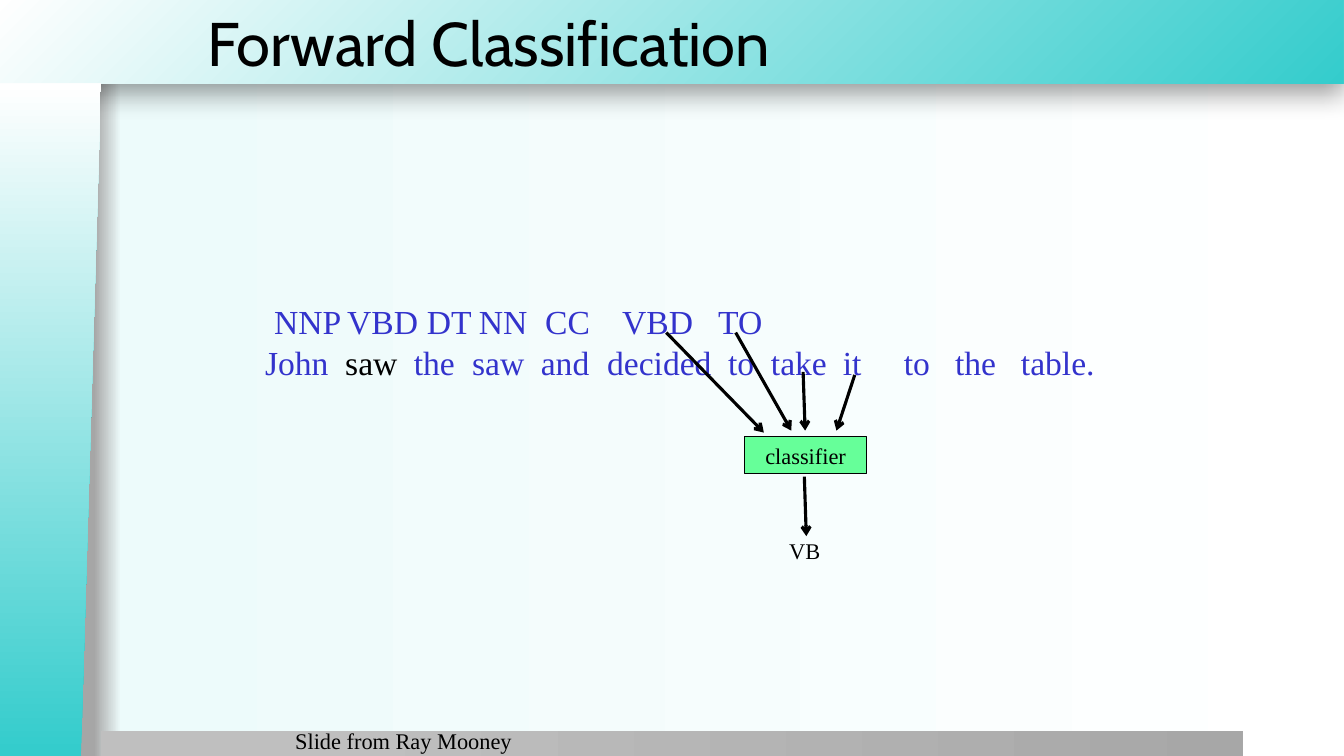
from lxml import etree
from pptx import Presentation
from pptx import util as u
from pptx.dml.color import RGBColor
from pptx.enum import shapes, text
from pptx.oxml import parse_xml
from pptx.oxml.ns import nsdecls, qn

COLORS = {
    "black": "000000",
    "white": "FFFFFF",
    "teal": "34CCCC",
    "mist": "EDFBFB",
    "shade": "A6A6A6",
    "footer_start": "BFBFBF",
    "footer_end": "A7A7A7",
    "tagged": "3333CC",
    "classifier": "66FF99",
}
SERIF = "Times New Roman"


class SlideBuilder:
    """Holds the style and the current slide."""

    def __init__(self, slide, font=SERIF, size=16, line_width=2.25):
        self.slide = slide
        self.font, self.size, self.line_width = font, size, line_width

    def color(self, name):
        return RGBColor.from_string(COLORS[name])

    def gradient(self, fill, owner, stops, circle=False):
        """Fill with (percent, color) stops, linear or from the lower right."""
        fill.gradient()
        gradient = owner.find(".//" + qn("a:gradFill"))
        for child in list(gradient):
            gradient.remove(child)
        stop_list = etree.SubElement(gradient, qn("a:gsLst"))
        for percent, name in stops:
            stop = etree.SubElement(stop_list, qn("a:gs"), pos=str(percent * 1000))
            etree.SubElement(stop, qn("a:srgbClr"), val=COLORS[name])
        if circle:
            centre = etree.SubElement(gradient, qn("a:path"), path="circle")
            etree.SubElement(centre, qn("a:fillToRect"), l="100000", t="100000")
        else:
            etree.SubElement(gradient, qn("a:lin"), ang="0", scaled="0")

    def background(self, stops):
        self.gradient(self.slide.background.fill, self.slide.element, stops)

    def shape(self, kind, left, top, width, height):
        shape = self.slide.shapes.add_shape(
            kind, u.Cm(left), u.Cm(top), u.Cm(width), u.Cm(height))
        shape.shadow.inherit = False
        shape.line.fill.background()
        return shape

    def band(self, kind, box, stops, circle=False):
        shape = self.shape(kind, *box)
        self.gradient(shape.fill, shape.element, stops, circle)
        return shape

    def drop_shadow(self, shape, blur, distance, alpha):
        effects = shape.element.spPr.find(qn("a:effectLst"))
        effects.append(parse_xml(
            f'<a:outerShdw {nsdecls("a")} blurRad="{u.Pt(blur)}" dist="{u.Pt(distance)}" '
            f'dir="5400000" algn="t" rotWithShape="0"><a:srgbClr val="{COLORS["black"]}">'
            f'<a:alpha val="{alpha * 1000}"/></a:srgbClr></a:outerShdw>'))

    def style(self, paragraph, color="black", size=None, font=None):
        paragraph.font.name = font or self.font
        paragraph.font.size = u.Pt(size or self.size)
        paragraph.font.color.rgb = self.color(color)

    def box(self, words, left, top, width, height, fill):
        shape = self.shape(shapes.MSO_SHAPE.RECTANGLE, left, top, width, height)
        shape.fill.solid()
        shape.fill.fore_color.rgb = self.color(fill)
        shape.line.color.rgb = self.color("black")
        shape.line.width = u.Pt(1)
        paragraph = shape.text_frame.paragraphs[0]
        paragraph.text = words
        paragraph.alignment = text.PP_ALIGN.CENTER
        self.style(paragraph)

    def text_frame(self, left, top, width, height):
        frame = self.slide.shapes.add_textbox(
            u.Cm(left), u.Cm(top), u.Cm(width), u.Cm(height)).text_frame
        frame.word_wrap = True
        return frame

    def label(self, words, box, align=text.PP_ALIGN.LEFT,
              anchor=text.MSO_ANCHOR.TOP, **style):
        frame = self.text_frame(*box)
        frame.vertical_anchor = anchor
        paragraph = frame.paragraphs[0]
        paragraph.text = words
        paragraph.alignment = align
        self.style(paragraph, **style)

    def tabbed_line(self, paragraph, runs, stops):
        """Write (words, color) runs whose tabs go to the stops, in Cm."""
        for words, color in runs:
            run = paragraph.add_run()
            run.text = words
            run.font.color.rgb = self.color(color)
        self.style(paragraph, "tagged", 24)
        tab_list = etree.Element(qn("a:tabLst"))
        for stop in stops:
            etree.SubElement(tab_list, qn("a:tab"), pos=str(u.Cm(stop)), algn="l")
        paragraph._p.get_or_add_pPr().insert(0, tab_list)

    def arrow(self, start, end):
        connector = self.slide.shapes.add_connector(
            shapes.MSO_CONNECTOR.STRAIGHT, *(u.Cm(value) for value in start + end))
        connector.line.color.rgb = self.color("black")
        connector.line.width = u.Pt(self.line_width)
        etree.SubElement(connector.line._get_or_add_ln(), qn("a:tailEnd"), type="arrow")
        etree.SubElement(connector.element.spPr, qn("a:effectLst"))


def main():
    presentation = Presentation()
    presentation.slide_width = u.Cm(33.87)
    presentation.slide_height = u.Cm(19.05)
    slide = presentation.slides.add_slide(presentation.slide_layouts[6])
    builder = SlideBuilder(slide)

    # Backdrop: header, footer and slanted side band
    builder.background([(7, "shade"), (9, "mist"), (100, "white")])
    header = builder.band(shapes.MSO_SHAPE.RECTANGLE, (-0.03, 0, 33.88, 2.11),
                          [(0, "teal"), (100, "white")], circle=True)
    builder.drop_shadow(header, blur=20, distance=6, alpha=40)
    builder.band(shapes.MSO_SHAPE.RECTANGLE, (2.54, 18.42, 28.78, 0.66),
                 [(20, "footer_start"), (100, "footer_end")])
    side = builder.band(shapes.MSO_SHAPE.FLOWCHART_MANUAL_INPUT,
                        (-7.21, 9.32, 16.97, 2.54), [(1, "teal"), (100, "white")])
    side.rotation = 270
    side.element.spPr.find(qn("a:xfrm")).set("flipV", "1")

    # Title
    builder.label("Forward Classification", (4.98, 0, 28.91, 2.11),
                  anchor=text.MSO_ANCHOR.MIDDLE, size=44, font="Cabin")

    # Tags above the words of the sentence
    sentence = builder.text_frame(6.43, 7.47, 21.62, 2.31)
    builder.tabbed_line(
        sentence.paragraphs[0],
        [("\tNNP\tVBD\tDT\tNN\tCC\tVBD\tTO", "tagged")],
        [0.23, 2.07, 4.08, 5.39, 7.06, 9, 11.42])
    builder.tabbed_line(
        sentence.add_paragraph(),
        [("John\t", "tagged"), ("saw", "black"),
         ("\tthe\tsaw\tand\tdecided\tto\ttake\tit\tto\tthe\ttable.", "tagged")],
        [2.02, 3.75, 5.22, 6.95, 8.62, 11.67, 12.75, 14.56, 16.1, 17.39, 19.05])

    # Classifier with its inputs and its output
    builder.box("classifier", 18.77, 11, 3.07, 0.94, "classifier")
    builder.label("VB", (19.3, 13.41, 1.96, 0.94), align=text.PP_ALIGN.CENTER)
    for start, end in [
        ((16.79, 8.38), (19.25, 10.9)),
        ((18.54, 8.38), (19.94, 10.85)),
        ((20.24, 9.37), (20.29, 10.85)),
        ((21.54, 9.45), (21.08, 10.85)),
        ((20.27, 12.01), (20.32, 13.51)),
    ]:
        builder.arrow(start, end)

    # Credit
    builder.label("Slide from Ray Mooney", (7.19, 18.21, 8.69, 0.64))

    presentation.save("out.pptx")


if __name__ == "__main__":
    main()
